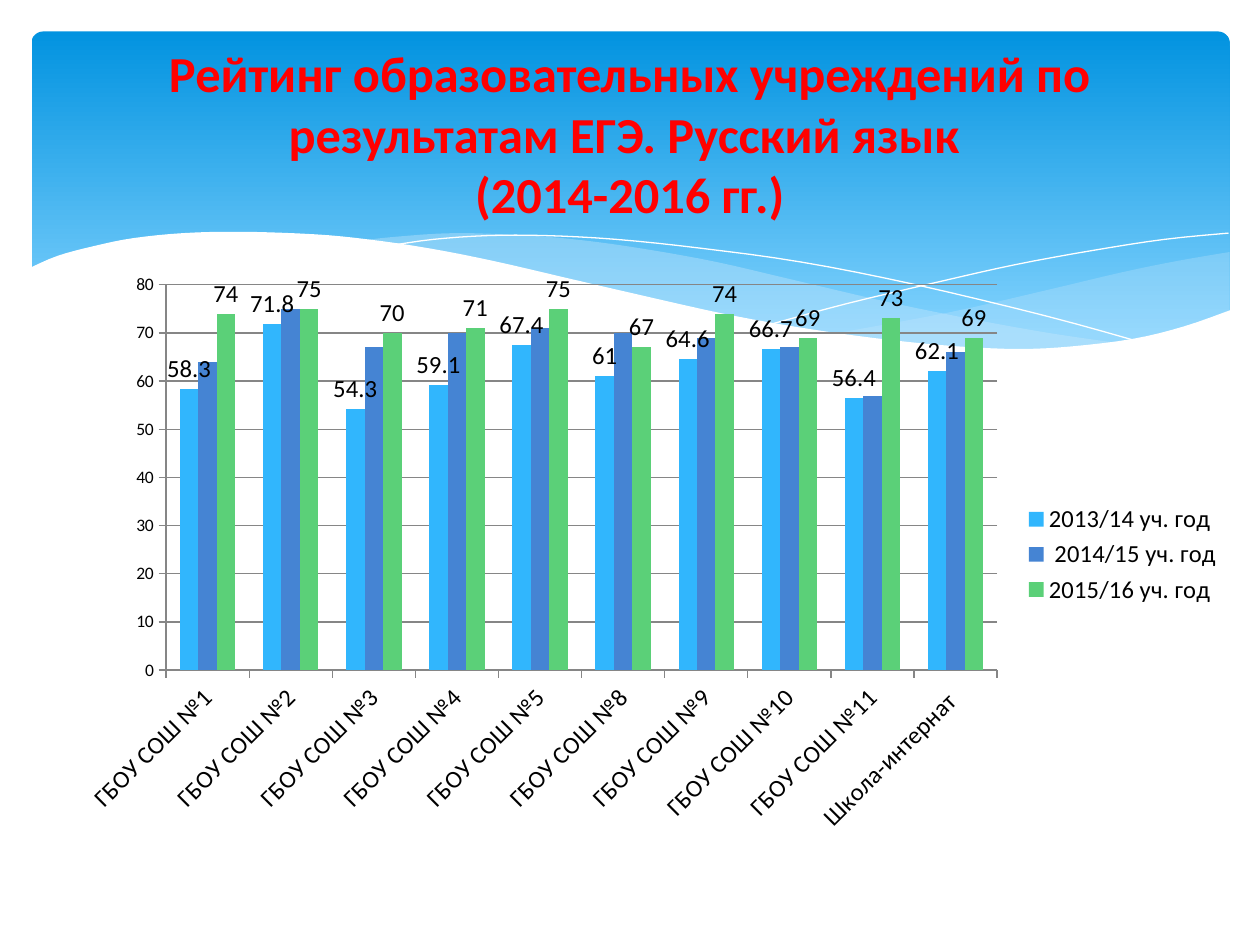
from lxml import etree
from pptx import Presentation
from pptx.chart.data import CategoryChartData
from pptx.dml.color import RGBColor
from pptx.enum.chart import XL_CHART_TYPE, XL_LABEL_POSITION, XL_LEGEND_POSITION, XL_TICK_MARK
from pptx.enum.shapes import MSO_SHAPE
from pptx.enum.text import MSO_ANCHOR, PP_ALIGN
from pptx.oxml import parse_xml
from pptx.oxml.ns import nsdecls, qn
from pptx.util import Inches, Pt


def color(value):
    return RGBColor.from_string(value)


def smooth(points, steps=4):
    """Points of a Catmull-Rom curve through the given points."""
    padded = [points[0], *points, points[-1]]
    curve = [points[0]]
    for a, b, c, d in zip(padded, padded[1:], padded[2:], padded[3:]):
        for step in range(1, steps + 1):
            t = step / steps
            curve.append(tuple(
                0.5 * (2 * q + (r - p) * t + (2 * p - 5 * q + 4 * r - s) * t ** 2
                       + (3 * q - p - 3 * r + s) * t ** 3)
                for p, q, r, s in zip(a, b, c, d)))
    return curve


prs = Presentation()
prs.slide_width, prs.slide_height = Inches(10), Inches(7.5)
slide = prs.slides.add_slide(prs.slide_layouts[6])
slide.background.fill.solid()
slide.background.fill.fore_color.rgb = color("FFFFFF")

# Blue header panel
header = slide.shapes.add_shape(
    MSO_SHAPE.ROUNDED_RECTANGLE, Inches(0.25), Inches(0.25), Inches(9.51), Inches(2.7))
header.adjustments[0] = 0.034
header.shadow.inherit = False
header.line.fill.background()
header.fill.gradient()
header.fill.gradient_angle = 270
for stop, (position, shade) in zip(header.fill.gradient_stops, [(0, "0293E0"), (0.9, "83D3FE")]):
    stop.position = position
    stop.color.rgb = color(shade)

# Waves: curved edges, fill, opacity in percent (no fill means a white hairline)
right_wave = [
    [(9.76, 2), (9.35, 2.07), (8.91, 2.16), (8.32, 2.3), (7.53, 2.48), (6.61, 2.65)],
    [(6.61, 2.65), (7.05, 2.71), (7.57, 2.76), (8.03, 2.78), (8.54, 2.76),
     (8.97, 2.7), (9.42, 2.59), (9.76, 2.47)]]
middle_wave = [
    [(8.93, 2.73), (8.37, 2.65), (7.75, 2.54), (7.06, 2.4), (6.29, 2.22), (5.69, 2.08),
     (5.14, 1.98), (4.65, 1.91), (4.2, 1.87), (3.61, 1.85), (3.13, 1.88), (2.86, 1.91)],
    [(2.86, 1.91), (3.42, 1.99), (4.04, 2.11), (4.91, 2.32), (5.66, 2.48), (6.34, 2.61),
     (6.95, 2.7), (7.48, 2.76), (7.96, 2.78), (8.48, 2.77), (8.93, 2.73)]]
falling_line = [
    [(3.09, 1.95), (3.44, 1.9), (3.87, 1.87), (4.33, 1.87), (4.89, 1.9), (5.56, 1.97),
     (6.36, 2.08), (7.27, 2.26), (8.31, 2.51), (9.07, 2.72)]]
rising_line = [
    [(6.13, 2.57), (6.72, 2.41), (7.48, 2.23), (8.06, 2.1), (8.66, 1.99),
     (9.24, 1.9), (9.75, 1.85)]]
white_wave = [
    [(9.77, 2.46), (9.4, 2.59), (8.99, 2.69), (8.5, 2.75), (8.09, 2.77), (7.61, 2.75),
     (7.08, 2.7), (6.48, 2.62), (5.79, 2.5), (5.03, 2.33), (4.47, 2.2), (3.91, 2.07),
     (3.4, 1.97), (2.92, 1.9), (2.5, 1.86), (1.93, 1.84), (1.46, 1.85), (1.06, 1.89),
     (0.76, 1.95), (0.46, 2.03), (0.23, 2.13)],
    [(0.23, 3.29)], [(9.77, 3.29)]]

for edges, shade, opacity in [
        (right_wave, "C6E7FC", 29), (middle_wave, "C6E7FC", 40),
        (falling_line, None, 100), (rising_line, None, 100), (white_wave, "FFFFFF", 100)]:
    outline = [(Inches(x), Inches(y)) for edge in edges for x, y in smooth(edge)]
    builder = slide.shapes.build_freeform(*outline[0])
    builder.add_line_segments(outline[1:], close=shade is not None)
    wave = builder.convert_to_shape()
    wave.shadow.inherit = False
    if shade is None:
        wave.fill.background()
        wave.line.color.rgb = color("FFFFFF")
        wave.line.width = Pt(0)
        continue
    wave.line.fill.background()
    wave.fill.solid()
    wave.fill.fore_color.rgb = color(shade)
    if opacity < 100:
        tint = wave.fill._xPr.find(".//" + qn("a:srgbClr"))
        etree.SubElement(tint, qn("a:alpha")).set("val", str(opacity * 1000))

# Chart data
results = CategoryChartData()
results.categories = [
    "ГБОУ СОШ №1", " ГБОУ СОШ №2", "ГБОУ СОШ №3", "ГБОУ СОШ №4", "ГБОУ СОШ №5",
    "ГБОУ СОШ №8", "ГБОУ СОШ №9", "ГБОУ СОШ №10", "ГБОУ СОШ №11", "Школа-интернат "]
results.add_series("2013/14 уч. год", [58.3, 71.8, 54.3, 59.1, 67.4, 61, 64.6, 66.7, 56.4, 62.1])
results.add_series(" 2014/15 уч. год", [64, 75, 67, 70, 71, 70, 69, 67, 57, 66])
results.add_series("2015/16 уч. год", [74, 75, 70, 71, 75, 67, 74, 69, 73, 69])

# Chart
chart = slide.shapes.add_chart(
    XL_CHART_TYPE.COLUMN_CLUSTERED, Inches(0.51), Inches(2.1), Inches(9.29), Inches(4.6),
    results).chart
chart.has_title = False
chart.font.name = "Calibri"
chart.font.size = Pt(10)
chart.font.color.rgb = color("000000")

chart.has_legend = True
chart.legend.position = XL_LEGEND_POSITION.RIGHT
chart.legend.include_in_layout = False
chart.legend.font.size = Pt(14)

plot = chart.plots[0]
plot.gap_width = 150
plot.overlap = 0
plot.vary_by_categories = False
for series, shade, label_size in zip(
        plot.series, ["31B6FD", "4584D3", "5BD078"], [14.1, None, 14]):
    series.format.fill.solid()
    series.format.fill.fore_color.rgb = color(shade)
    series.invert_if_negative = False
    if label_size:
        labels = series.data_labels
        labels.show_value = True
        labels.position = XL_LABEL_POSITION.OUTSIDE_END
        labels.font.size = Pt(label_size)

# Axes
scores, schools = chart.value_axis, chart.category_axis
scores.minimum_scale, scores.maximum_scale, scores.major_unit = 0, 80, 10
scores.has_major_gridlines = True
for axis in (scores, schools):
    axis.major_tick_mark = XL_TICK_MARK.OUTSIDE
    axis.minor_tick_mark = XL_TICK_MARK.NONE
for ruling in (scores, schools, scores.major_gridlines):
    ruling.format.line.color.rgb = color("868686")
    ruling.format.line.width = Pt(0.75)
schools.tick_labels.font.size = Pt(14)
schools._element.find(".//" + qn("a:bodyPr")).set("rot", "-2700000")

# Plot area inside the chart frame
plot_area = chart._chartSpace.chart.plotArea
for layout in plot_area.findall(qn("c:layout")):
    plot_area.remove(layout)
plot_area.insert(0, parse_xml(
    f'<c:layout {nsdecls("c")}><c:manualLayout><c:layoutTarget val="inner"/>'
    '<c:xMode val="edge"/><c:yMode val="edge"/><c:x val="0.087"/><c:y val="0.035"/>'
    '<c:w val="0.71"/><c:h val="0.665"/></c:manualLayout></c:layout>'))

# Title
title = slide.shapes.add_textbox(Inches(0.5), Inches(0.37), Inches(9), Inches(1.37)).text_frame
title.word_wrap = True
title.vertical_anchor = MSO_ANCHOR.MIDDLE
heading = title.paragraphs[0]
heading.alignment = PP_ALIGN.CENTER
for index, line in enumerate([
        "Рейтинг образовательных учреждений по результатам ЕГЭ. Русский язык ",
        "(2014-2016 гг.)"]):
    if index:
        heading.add_line_break()
    run = heading.add_run()
    run.text = line
    run.font.name = "Calibri"
    run.font.size = Pt(28.8)
    run.font.bold = True
    run.font.color.rgb = color("FF0000")

prs.save("out.pptx")
